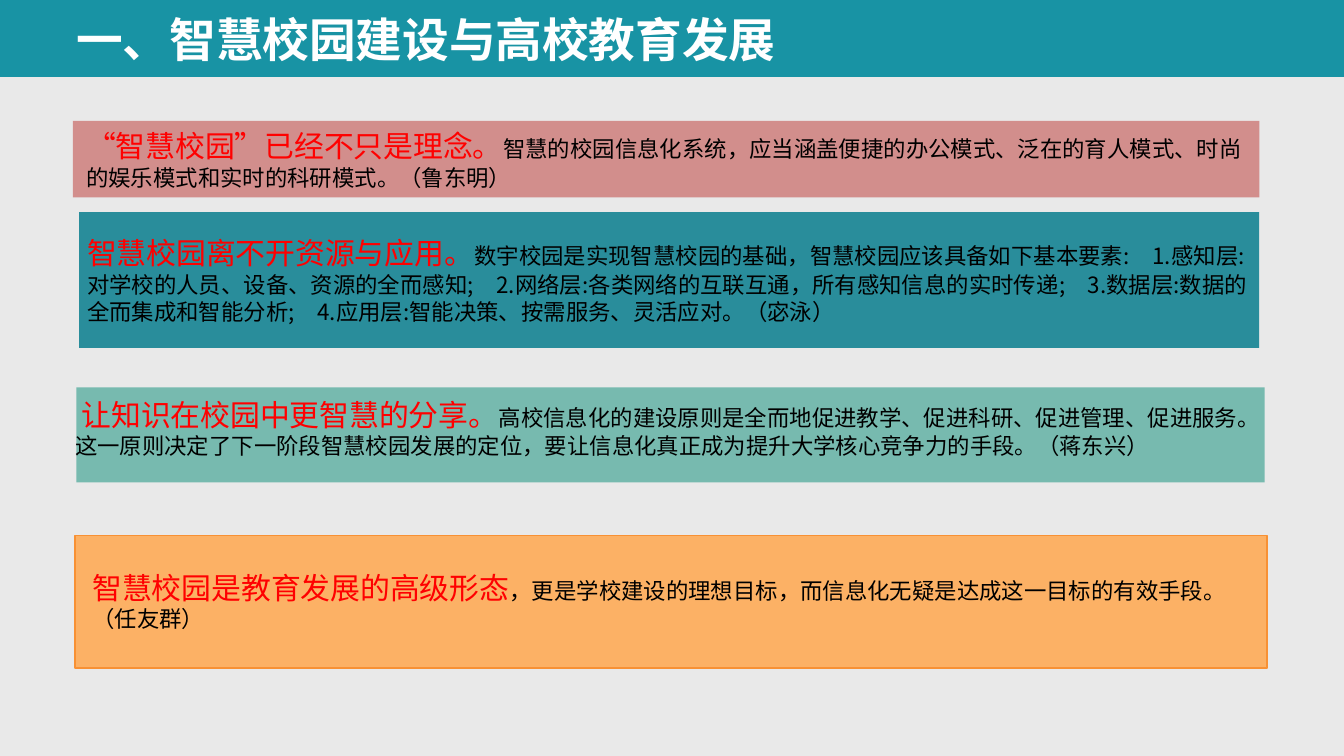
from lxml.etree import SubElement
from pptx import Presentation
from pptx.dml.color import RGBColor
from pptx.enum.lang import MSO_LANGUAGE_ID
from pptx.enum.shapes import MSO_SHAPE
from pptx.enum.text import MSO_ANCHOR, PP_ALIGN
from pptx.oxml.ns import qn
from pptx.util import Pt

COLORS = {
    "back": "E9E9E9", "head": "1893A4", "rose": "D28E8C", "teal": "158493",
    "mint": "6BB5A9", "gold": "FFAB57", "edge": "F89134",
    "lead": "FF0000", "body": "000000", "title": "FFFFFF",
}
FONT = "Noto Sans CJK SC"
FORMATS = {
    "title": {"size": Pt(25), "bold": True},
    "lead": {"size": Pt(16), "bold": False},
    "body": {"size": Pt(12), "bold": False},
}


class Deck:
    def __init__(self, wide, high):
        self.show = Presentation()
        self.show.slide_width, self.show.slide_height = Pt(wide), Pt(high)
        self.slide = self.show.slides.add_slide(self.show.slide_layouts[6])
        self.paint(self.slide.background.fill, "back")

    def paint(self, fill, color):
        fill.solid()
        fill.fore_color.rgb = RGBColor.from_string(COLORS[color])

    def band(self, area, color, alpha=100, edge=None):
        shape = self.slide.shapes.add_shape(MSO_SHAPE.RECTANGLE, *map(Pt, area))
        shape.shadow.inherit = False
        self.paint(shape.fill, color)
        if alpha < 100:
            tone = shape.element.spPr.find(qn("a:solidFill"))[0]
            SubElement(tone, qn("a:alpha"), val=str(alpha * 1000))
        if edge:
            self.paint(shape.line.fill, edge)
            shape.line.width = Pt(1)
        else:
            shape.line.fill.background()
        return shape

    def box(self, area):
        return self.slide.shapes.add_textbox(*map(Pt, area))

    def label(self, shape, parts, anchor=MSO_ANCHOR.TOP, pitch=None):
        frame = shape.text_frame
        frame.word_wrap, frame.vertical_anchor = True, anchor
        para = frame.paragraphs[0]
        para.alignment, para.line_spacing = PP_ALIGN.LEFT, pitch
        for kind, text in parts.items():
            run = para.add_run()
            run.text = text
            for name, value in FORMATS[kind].items():
                setattr(run.font, name, value)
            self.paint(run.font.fill, kind)
            run.font.name = FONT
            run.font.language_id = MSO_LANGUAGE_ID.SIMPLIFIED_CHINESE
            SubElement(run.font._rPr, qn("a:ea"), typeface=FONT)


def main():
    deck = Deck(720, 405)

    # Header and coloured bands
    deck.band((0, 0, 720, 41.2), "head")
    deck.band((42.4, 113.6, 632.2, 72.8), "teal", 90)
    deck.band((41, 207.5, 636.5, 51), "mint", 90)
    deck.band((40.2, 286.9, 638.8, 71.2), "gold", 90, "edge")
    rose = deck.band((39.1, 64.8, 635.6, 41), "rose")

    # Title
    deck.label(deck.box((33.8, 2.2, 648, 67.7)),
               {"title": "一、智慧校园建设与高校教育发展"}, pitch=Pt(30))

    # Views: a red lead, then the plain text
    deck.label(rose, {
        "lead": "“智慧校园”已经不只是理念。",
        "body": "智慧的校园信息化系统，应当涵盖便捷的办公模式、泛在的育人模式、"
                "时尚的娱乐模式和实时的科研模式。（鲁东明）",
    }, MSO_ANCHOR.MIDDLE)
    deck.label(deck.box((39.6, 122.4, 640.8, 55.4)), {
        "lead": "智慧校园离不开资源与应用。",
        "body": "数宇校园是实现智慧校园的基础，智慧校园应该具备如下基本要素:　"
                "1.感知层:对学校的人员、设备、资源的全而感知;　"
                "2.网络层:各类网络的互联互通，所有感知信息的实时传递;　"
                "3.数据层:数据的全而集成和智能分析;　"
                "4.应用层:智能决策、按需服务、灵活应对。（宓泳）",
    })
    deck.label(deck.box((33.1, 208.8, 640.1, 41)), {
        "lead": " 让知识在校园中更智慧的分享。",
        "body": "高校信息化的建设原则是全而地促进教学、促进科研、促进管理、促进服务。"
                "这一原则决定了下一阶段智慧校园发展的定位，"
                "要让信息化真正成为提升大学核心竞争力的手段。（蒋东兴）",
    })
    deck.label(deck.box((42.5, 301.7, 629.3, 41)), {
        "lead": "智慧校园是教育发展的高级形态",
        "body": "，更是学校建设的理想目标，而信息化无疑是达成这一目标的有效手段。"
                "（任友群）",
    })

    deck.show.save("out.pptx")


if __name__ == "__main__":
    main()
